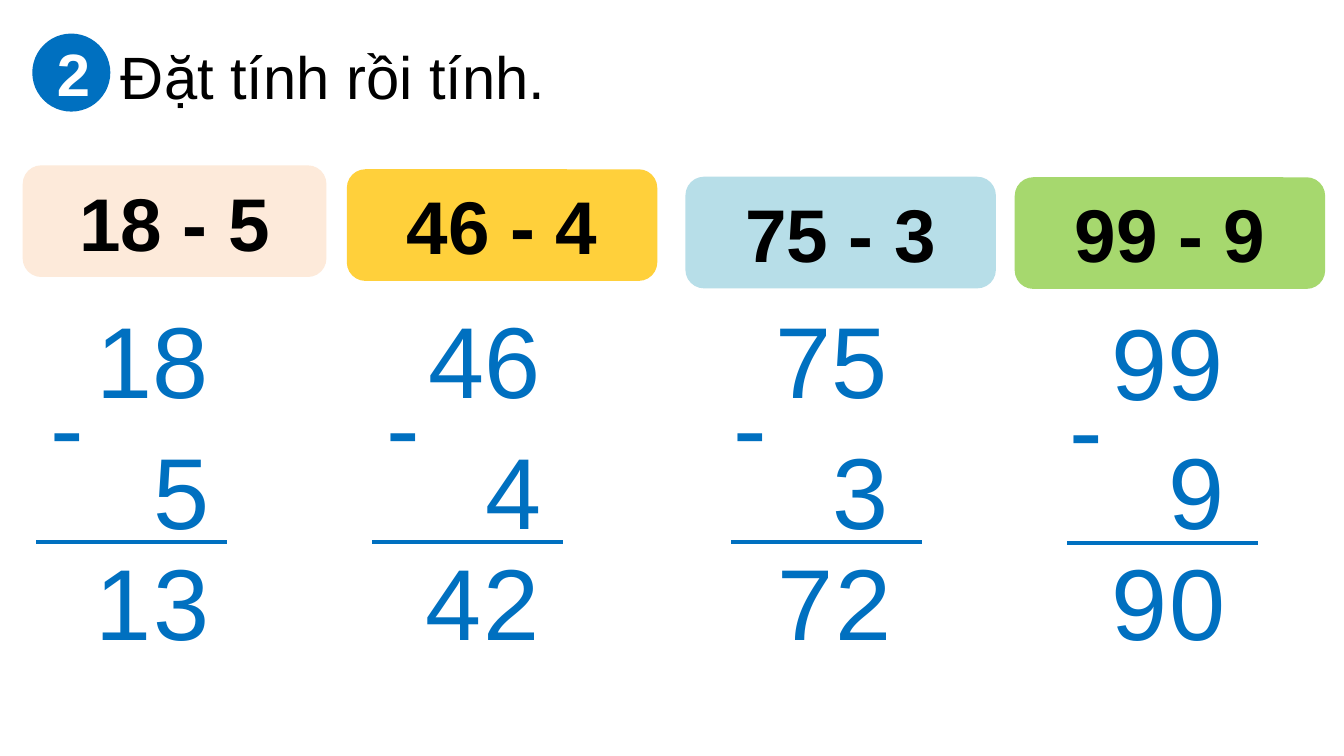
from lxml import etree
from pptx import Presentation
from pptx.dml.color import RGBColor
from pptx.enum import shapes, text
from pptx.oxml import ns
from pptx.util import Pt

COLORS = {
    "blue": "0070C0", "white": "FFFFFF", "black": "000000",
    "peach": "FDEADA", "yellow": "FFD03B", "aqua": "B7DEE8", "green": "A6D86E",
}


def write(sp, content, size=54, color="blue", bold=False,
          align=text.PP_ALIGN.CENTER, anchor=text.MSO_ANCHOR.MIDDLE):
    tf = sp.text_frame
    tf.word_wrap = True
    tf.auto_size = text.MSO_AUTO_SIZE.NONE
    tf.vertical_anchor = anchor
    p = tf.paragraphs[0]
    p.alignment = align
    p.line_spacing = 1.0
    p.space_before = Pt(0)
    r = p.add_run()
    r.text = content
    r.font.name = "Arial"
    r.font.size = Pt(size)
    r.font.bold = bold
    r.font.color.rgb = RGBColor.from_string(COLORS[color])


def add_filled(s, kind, x, y, w, h, color):
    sp = s.shapes.add_shape(kind, Pt(x), Pt(y), Pt(w), Pt(h))
    sp.shadow.inherit = False
    sp.fill.solid()
    sp.fill.fore_color.rgb = RGBColor.from_string(COLORS[color])
    sp.line.fill.background()
    return sp


prs = Presentation()
prs.slide_width, prs.slide_height = Pt(720), Pt(405)
s = prs.slides.add_slide(prs.slide_layouts[5])

title = s.shapes.title
title.left, title.top, title.width, title.height = Pt(57.6), Pt(4.3), Pt(644.4), Pt(72)
write(title, "Đặt tính rồi tính.", size=32, color="black", align=text.PP_ALIGN.JUSTIFY)

badge = add_filled(s, shapes.MSO_SHAPE.OVAL, 17.3, 18, 41.8, 41.8, "blue")
write(badge, "2", size=32, color="white", bold=True)

cards = [
    (18, 5, "peach", 12.2, 88.6, 162.7),
    (46, 4, "yellow", 185.8, 90.7, 166.3),
    (75, 3, "aqua", 367.2, 94.7, 166.3),
    (99, 9, "green", 543.6, 95, 166.3),
]
for a, b, color, x, y, w in cards:
    card = add_filled(s, shapes.MSO_SHAPE.ROUNDED_RECTANGLE, x, y, w, 59.8, color)
    write(card, f"{a} - {b}", size=40, color="black", bold=True)

column_lefts = [
    (39.6, -5.8, 19.4, 43.9, 0),
    (217.4, 174.2, 199.4, 221, 0),
    (403.2, 360, 391.7, 409.7, 0),
    (583.2, 540, 571.7, 588.2, 0.7),
]
for (a, b, *_), (left, minus_left, rule_left, answer_left, drop) in zip(cards, column_lefts):
    tens, units = str(a - b)
    digits = [
        (str(a), left, 156.2 + drop, 84.2),
        (str(b), left + 15.6, 226.3, 84.2),
        ("-", minus_left, 191.5 + drop, 84.2),
        (tens, answer_left, 285.8, 43.9),
        (units, answer_left + 31, 285.8, 43.9),
    ]
    for content, x, y, w in digits:
        box = s.shapes.add_textbox(Pt(x), Pt(y), Pt(w), Pt(72.7))
        write(box, content, anchor=text.MSO_ANCHOR.TOP)

    y = Pt(290.2 + drop)
    rule = s.shapes.add_connector(
        shapes.MSO_CONNECTOR.STRAIGHT, Pt(rule_left), y, Pt(rule_left + 102.2), y)
    rule.line.color.rgb = RGBColor.from_string(COLORS["blue"])
    rule.line.width = Pt(2.25)
    etree.SubElement(rule._element.spPr, ns.qn("a:effectLst"))

prs.save("out.pptx")
